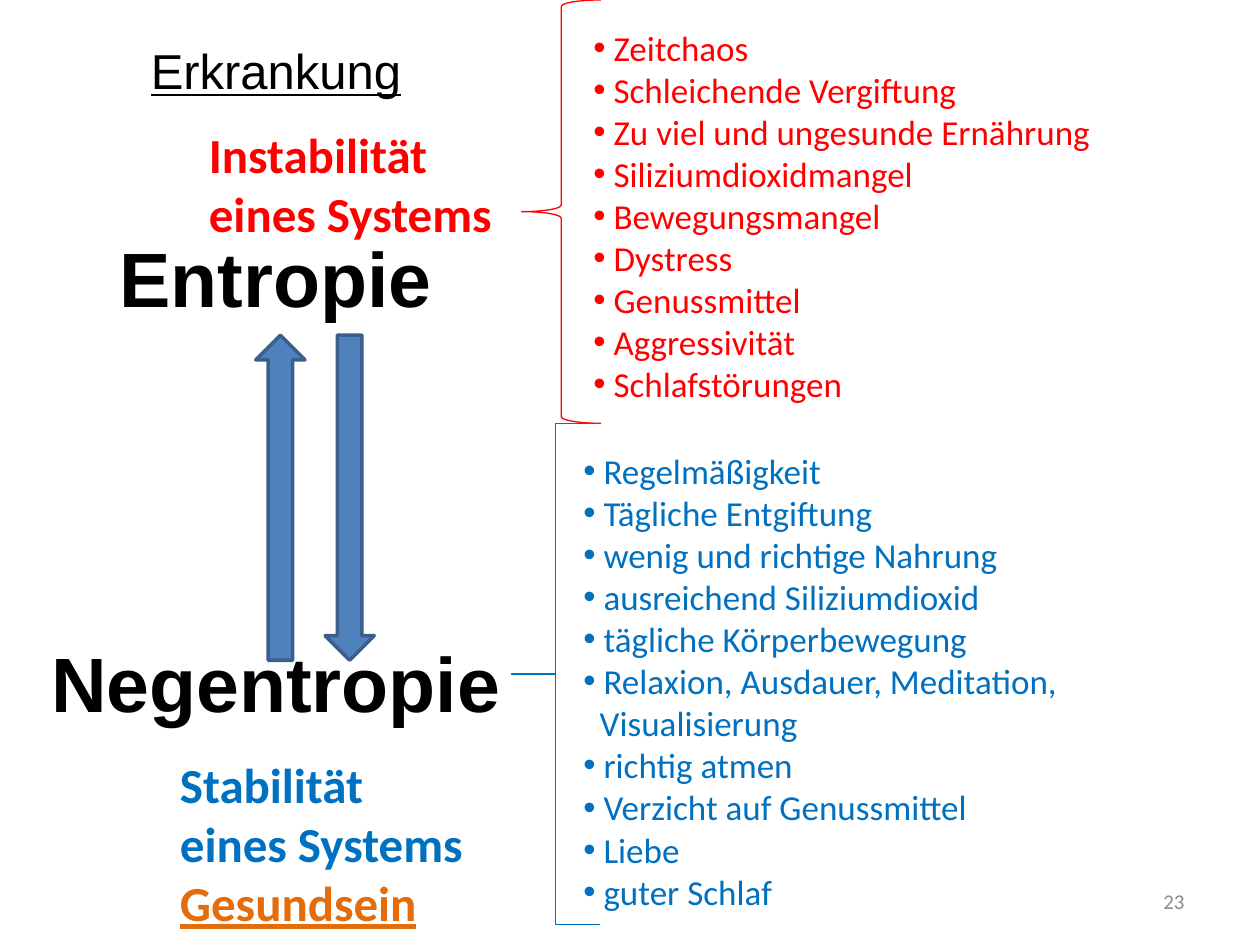
from typing import NamedTuple

from lxml import etree
from pptx import Presentation
from pptx import util as u
from pptx.dml.color import RGBColor
from pptx.enum import shapes, text
from pptx.oxml.ns import qn

COLUMNS, ROWS = 100, 75
CELL = u.Inches(0.1)

BLACK = RGBColor(0x00, 0x00, 0x00)
RED = RGBColor(0xFF, 0x00, 0x00)
BLUE = RGBColor(0x00, 0x70, 0xC0)
ORANGE = RGBColor(0xE4, 0x6C, 0x0A)
ARROW_FILL = RGBColor(0x4F, 0x81, 0xBD)
ARROW_LINE = RGBColor(0x3A, 0x5F, 0x8C)
GRAY = RGBColor(0x8C, 0x8C, 0x8C)

ILLNESS_FACTORS = [
    "Zeitchaos", "Schleichende Vergiftung", "Zu viel und ungesunde Ernährung",
    "Siliziumdioxidmangel", "Bewegungsmangel", "Dystress", "Genussmittel",
    "Aggressivität", "Schlafstörungen",
]
CONTINUATION = "Visualisierung"
HEALTH_FACTORS = [
    "Regelmäßigkeit", "Tägliche Entgiftung", "wenig und richtige Nahrung",
    "ausreichend Siliziumdioxid", "tägliche Körperbewegung",
    "Relaxion, Ausdauer, Meditation,", CONTINUATION, "richtig atmen",
    "Verzicht auf Genussmittel", "Liebe", "guter Schlaf",
]


class Box(NamedTuple):
    """An area in columns and rows of the slide grid."""
    left: float
    top: float
    width: float
    height: float

    def inner(self, left, top, width, height):
        return Box(self.left + left, self.top + top, width, height)

    def emu(self):
        return [round(length * CELL) for length in self]


def style(target, **formats):
    color = formats.pop("color", None)
    for name, value in formats.items():
        setattr(target.font, name, value)
    if color is not None:
        target.font.color.rgb = color


def add_label(slide, box, lines, size, bold=False, align=text.PP_ALIGN.LEFT,
              anchor=text.MSO_ANCHOR.TOP):
    frame = slide.shapes.add_textbox(*box.emu()).text_frame
    frame.word_wrap = False
    frame.vertical_anchor = anchor
    for number, (wording, formats) in enumerate(lines):
        line = frame.add_paragraph() if number else frame.paragraphs[0]
        line.alignment = align
        run = line.add_run()
        run.text = wording
        style(run, name="Calibri", size=u.Pt(size), bold=bold, **formats)


def add_states(slide, box):
    """Table with the heading and the two opposite states."""
    entries = [
        ("Erkrankung", 15.3, 0.5, dict(size=u.Pt(28), underline=True)),
        ("Entropie", 15.9, 0.5, dict(size=u.Pt(44), bold=True)),
        ("Negentropie", 35.8, 16.7, dict(size=u.Pt(44), bold=True)),
    ]
    table = slide.shapes.add_table(len(entries), 1, *box.emu()).table
    table.first_row = table.horz_banding = False
    for row, (wording, height, margin, formats) in enumerate(entries):
        table.rows[row].height = round(height * CELL)
        cell = table.cell(row, 0)
        cell.fill.background()
        cell.margin_top = round(margin * CELL)
        line = cell.text_frame.paragraphs[0]
        line.alignment = text.PP_ALIGN.CENTER
        run = line.add_run()
        run.text = wording
        style(run, name="Arial", color=BLACK, **formats)


def add_exchange(slide, box):
    """Pair of opposite arrows at the two sides of the box."""
    width = 3.9
    for left, rotation in ((0, 180), (box.width - width, 0)):
        arrow = slide.shapes.add_shape(
            shapes.MSO_SHAPE.DOWN_ARROW,
            *box.inner(left, 0, width, box.height).emu())
        arrow.rotation = rotation
        arrow.shadow.inherit = False
        arrow.fill.solid()
        arrow.fill.fore_color.rgb = ARROW_FILL
        arrow.line.color.rgb = ARROW_LINE
        arrow.line.width = u.Pt(2)


def set_bullet(paragraph, bulleted):
    indent = u.Inches(0.16) if bulleted else 0
    properties = paragraph._p.get_or_add_pPr()
    properties.set("marL", str(indent or u.Inches(0.13)))
    properties.set("indent", str(-indent))
    if bulleted:
        etree.SubElement(properties, qn("a:buFont")).set("typeface", "Arial")
        etree.SubElement(properties, qn("a:buChar")).set("char", "•")
    else:
        etree.SubElement(properties, qn("a:buNone"))


def add_factors(slide, box, body, body_box, factors, color, adjustments=()):
    """Brace filling the left of the box, with a bulleted list beside it."""
    brace = slide.shapes.add_shape(shapes.MSO_SHAPE.LEFT_BRACE, *box.emu())
    for number, value in enumerate(adjustments):
        brace.adjustments[number] = value
    brace.shadow.inherit = False
    brace.fill.background()
    brace.line.color.rgb = color
    brace.line.width = u.Pt(0.75)

    body.left, body.top, body.width, body.height = box.inner(*body_box).emu()
    frame = body.text_frame
    frame.word_wrap = True
    frame.auto_size = text.MSO_AUTO_SIZE.NONE
    frame.vertical_anchor = text.MSO_ANCHOR.TOP
    for number, factor in enumerate(factors):
        line = frame.add_paragraph() if number else frame.paragraphs[0]
        line.space_before = u.Pt(0)
        set_bullet(line, factor != CONTINUATION)
        run = line.add_run()
        run.text = factor
        style(run, name="Calibri", size=u.Pt(20), color=color)


def add_entropy_slide(presentation):
    two_content = presentation.slide_layouts[3]
    slide = presentation.slides.add_slide(two_content)
    title, illness, health = slide.placeholders
    title._element.getparent().remove(title._element)

    add_states(slide, Box(1.6, 3.1, 40.6, 67))
    add_exchange(slide, Box(20.3, 26.6, 9.4, 25.8))
    add_label(slide, Box(15.6, 9.4, 24.7, 10.4),
              [("Instabilität", dict(color=RED)),
               ("eines Systems", dict(color=RED))], 28, bold=True)
    add_label(slide, Box(13.3, 59.4, 24.7, 15.1),
              [("Stabilität", dict(color=BLUE)),
               ("eines Systems", dict(color=BLUE)),
               ("Gesundsein", dict(color=ORANGE, underline=True))],
              28, bold=True)
    add_factors(slide, Box(41.4, 0, 6.3, 33.6), illness,
                (4.7, 1.6, 53.9, 31.3), ILLNESS_FACTORS, RED)
    add_factors(slide, Box(40.6, 33.6, 7, 39.8), health,
                (4.7, 1.6, 54.7, 38), HEALTH_FACTORS, BLUE, (0, 0.5))
    add_label(slide, Box(71.7, 69.5, 23.3, 4), [("23", dict(color=GRAY))], 12,
              align=text.PP_ALIGN.RIGHT, anchor=text.MSO_ANCHOR.MIDDLE)


def main():
    presentation = Presentation()
    presentation.slide_width = COLUMNS * CELL
    presentation.slide_height = ROWS * CELL
    add_entropy_slide(presentation)
    presentation.save("out.pptx")


if __name__ == "__main__":
    main()
